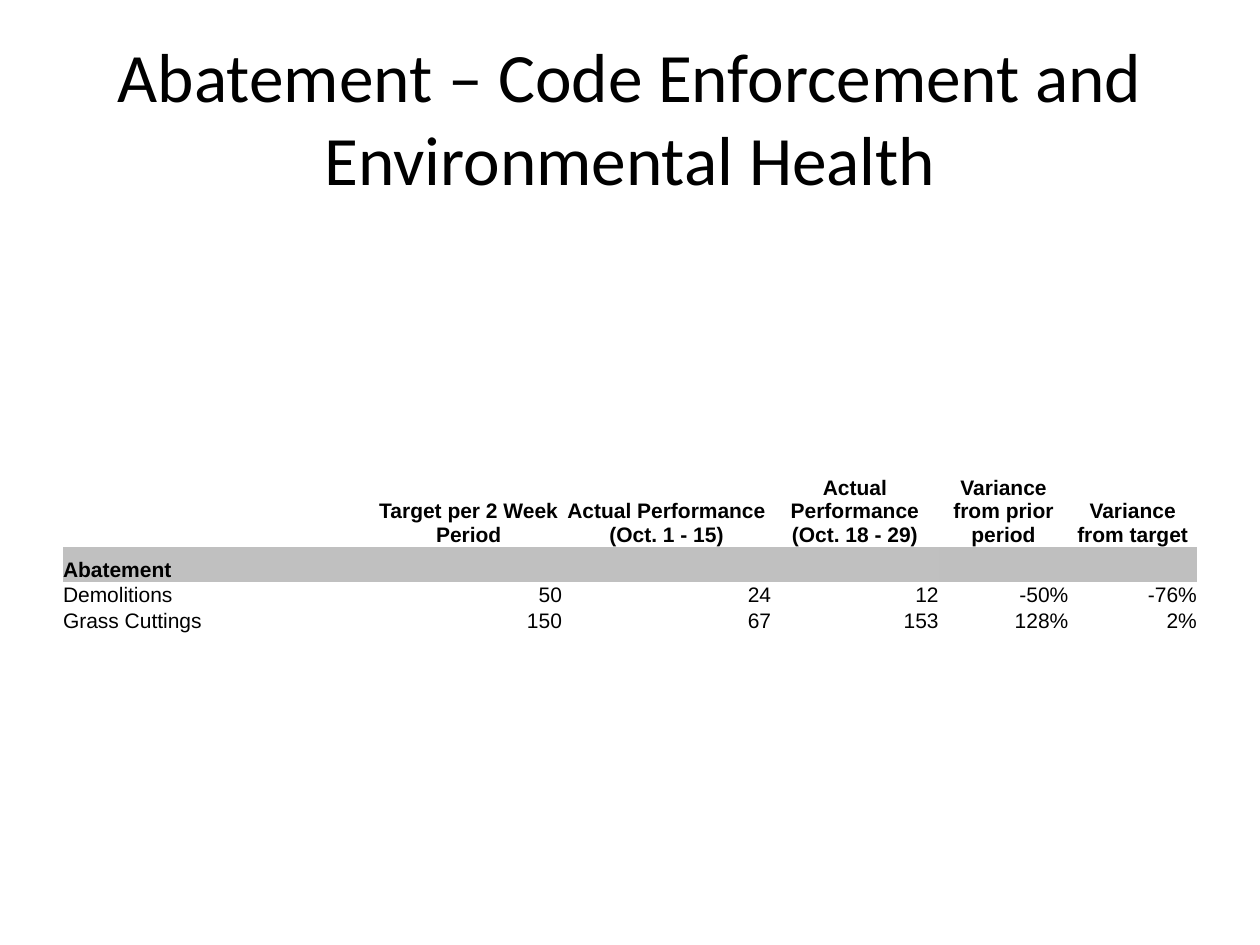
from dataclasses import dataclass
from typing import Optional

from pptx import Presentation
from pptx.dml.color import RGBColor
from pptx.enum.text import MSO_ANCHOR, MSO_AUTO_SIZE, PP_ALIGN
from pptx.oxml.ns import qn
from pptx.util import Inches, Pt

COLORS = {"text": "000000", "band": "C0C0C0", "variance band": "BFBFBF"}
NO_STYLE_NO_GRID = "{2D5ABB26-0587-4C30-8999-92F81FD0307C}"
COLUMN_WIDTHS = [2.48, 1.48, 1.66, 1.33, 1.03, 1.02]
FIRST_VARIANCE_COLUMN = 4


@dataclass
class TableRow:
    height: float
    texts: list[str]
    bold: bool = False
    banded: bool = False
    value_align: PP_ALIGN = PP_ALIGN.RIGHT


ROWS = [
    TableRow(0.84, ["", "Target per 2 Week Period", "Actual Performance (Oct. 1 - 15)",
                    "Actual Performance (Oct. 18 - 29)", "Variance from prior period",
                    "Variance from target"], bold=True, value_align=PP_ALIGN.CENTER),
    TableRow(0.21, ["Abatement", "", "", "", "", ""], bold=True, banded=True),
    TableRow(0.2, ["Demolitions", "50", "24", "12", "-50%", "-76%"]),
    TableRow(0.2, ["Grass Cuttings", "150", "67", "153", "128%", "2%"]),
]


def write_text(frame, text: str, *, font: str, size: float, bold: bool = False,
               align: PP_ALIGN = PP_ALIGN.LEFT) -> None:
    para = frame.paragraphs[0]
    para.alignment = align
    span = para.add_run()
    span.text = text
    span.font.name = font
    span.font.size = Pt(size)
    span.font.bold = bold
    span.font.color.rgb = RGBColor.from_string(COLORS["text"])


def format_cell(cell, fill: Optional[str]) -> None:
    cell.margin_left = cell.margin_right = cell.margin_top = cell.margin_bottom = 0
    cell.vertical_anchor = MSO_ANCHOR.BOTTOM
    if fill:
        cell.fill.solid()
        cell.fill.fore_color.rgb = RGBColor.from_string(COLORS[fill])
    else:
        cell.fill.background()


def add_title(page, text: str) -> None:
    title = page.shapes.title
    title.left, title.top = Inches(0.5), Inches(0.3)
    title.width, title.height = Inches(9), Inches(1.25)
    frame = title.text_frame
    frame.word_wrap = True
    frame.auto_size = MSO_AUTO_SIZE.NONE
    frame.vertical_anchor = MSO_ANCHOR.MIDDLE
    write_text(frame, text, font="Calibri", size=39.6, align=PP_ALIGN.CENTER)


def add_performance_table(page, rows: list[TableRow]) -> None:
    frame = page.shapes.add_table(
        len(rows), len(COLUMN_WIDTHS), Inches(0.5), Inches(3.5),
        Inches(sum(COLUMN_WIDTHS)), Inches(sum(row.height for row in rows)))
    table = frame.table
    table.first_row = table.horz_banding = False
    table._tbl.tblPr.find(qn("a:tableStyleId")).text = NO_STYLE_NO_GRID

    for column, width in zip(table.columns, COLUMN_WIDTHS):
        column.width = Inches(width)
    for row_index, row in enumerate(rows):
        table.rows[row_index].height = Inches(row.height)
        for column_index, text in enumerate(row.texts):
            cell = table.cell(row_index, column_index)
            is_variance = column_index >= FIRST_VARIANCE_COLUMN
            band = "variance band" if is_variance else "band"
            format_cell(cell, band if row.banded else None)
            write_text(cell.text_frame, text, font="Arial", size=12, bold=row.bold,
                       align=row.value_align if column_index else PP_ALIGN.LEFT)


def main() -> None:
    deck = Presentation()
    deck.slide_width, deck.slide_height = Inches(10), Inches(7.5)
    page = deck.slides.add_slide(deck.slide_layouts[5])  # title only
    add_title(page, "Abatement – Code Enforcement and Environmental Health")
    add_performance_table(page, ROWS)
    deck.save("out.pptx")


if __name__ == "__main__":
    main()
